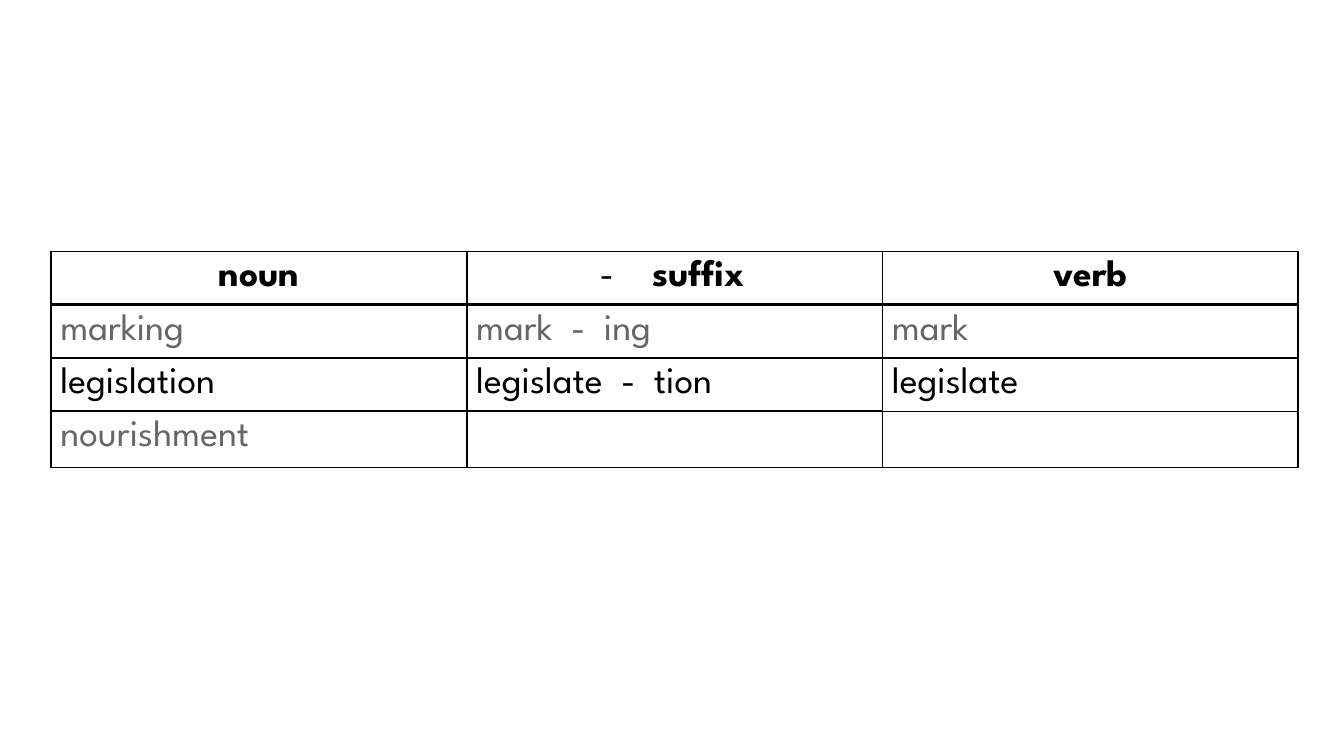
from lxml import etree
from pptx import Presentation
from pptx.dml.color import RGBColor
from pptx.enum.text import PP_ALIGN
from pptx.oxml.ns import qn
from pptx.util import Inches, Pt

CENTER, LEFT = PP_ALIGN.CENTER, PP_ALIGN.LEFT
BLACK, GRAY = "000000", "666666"
FONT = {"name": "League Spartan", "size": Pt(20)}
MARGINS = ("margin_left", "margin_right", "margin_top", "margin_bottom")

ROWS = [
    ("noun", "suffix  ", "verb"),
    ("marking", "mark  -  ing", "mark"),
    ("legislation", "legislate  -  tion", "legislate"),
    ("nourishment", "", ""),
]
INKS = [BLACK, GRAY, BLACK, GRAY]
HEIGHTS = [0.39, 0.39, 0.39, 0.42]
# Widths of lines below a cell, where they are not 1 point
RULES = {(0, 0): 2.25, (0, 1): 2.25, (0, 2): 2.25, (2, 2): 0.75}


def color(text):
    return RGBColor.from_string(text)


def add_tag(parent, tag, **attrs):
    return etree.SubElement(parent, qn(tag), attrs)


def add_lines(cell, row, col):
    props = cell._tc.get_or_add_tcPr()
    widths = {"L": 1, "R": 1, "T": RULES.get((row - 1, col), 1),
              "B": RULES.get((row, col), 1)}
    for side, width in widths.items():
        line = add_tag(props, f"a:ln{side}", w=str(Pt(width)))
        fill = add_tag(line, "a:solidFill")
        add_tag(fill, "a:srgbClr", val=BLACK)


def add_dash(para):
    props = para._p.get_or_add_pPr()
    props.set("marL", str(Inches(0.5)))
    props.set("indent", str(Inches(-0.39)))
    add_tag(add_tag(props, "a:buClr"), "a:srgbClr", val=BLACK)
    add_tag(props, "a:buFont", typeface=FONT["name"])
    add_tag(props, "a:buChar", char="-")


def fill_cell(cell, text, ink, head):
    for name in MARGINS:
        setattr(cell, name, Inches(0.07))
    para = cell.text_frame.paragraphs[0]
    para.alignment = CENTER if head else LEFT
    run = para.add_run()
    run.text = text
    for name, value in {**FONT, "bold": head}.items():
        setattr(run.font, name, value)
    run.font.color.rgb = color(ink)


def add_words(slide, left, top, width):
    count = len(ROWS[0])
    table = slide.shapes.add_table(
        len(ROWS), count, Inches(left), Inches(top),
        Inches(width), Inches(sum(HEIGHTS))).table
    table.first_row = table.horz_banding = False
    for col in table.columns:
        col.width = Inches(width / count)
    for row, words in enumerate(ROWS):
        table.rows[row].height = Inches(HEIGHTS[row])
        for col, text in enumerate(words):
            cell = table.cell(row, col)
            add_lines(cell, row, col)
            cell.fill.background()
            if text:
                fill_cell(cell, text, INKS[row], row == 0)
    # Dash before the suffix heading
    add_dash(table.cell(0, 1).text_frame.paragraphs[0])


def main():
    deck = Presentation()
    # Wide slide, 16 to 9
    deck.slide_width, deck.slide_height = Inches(10), Inches(10 * 9 / 16)
    slide = deck.slides.add_slide(deck.slide_layouts[6])
    add_words(slide, 0.38, 1.87, 9.28)
    deck.save("out.pptx")


if __name__ == "__main__":
    main()
